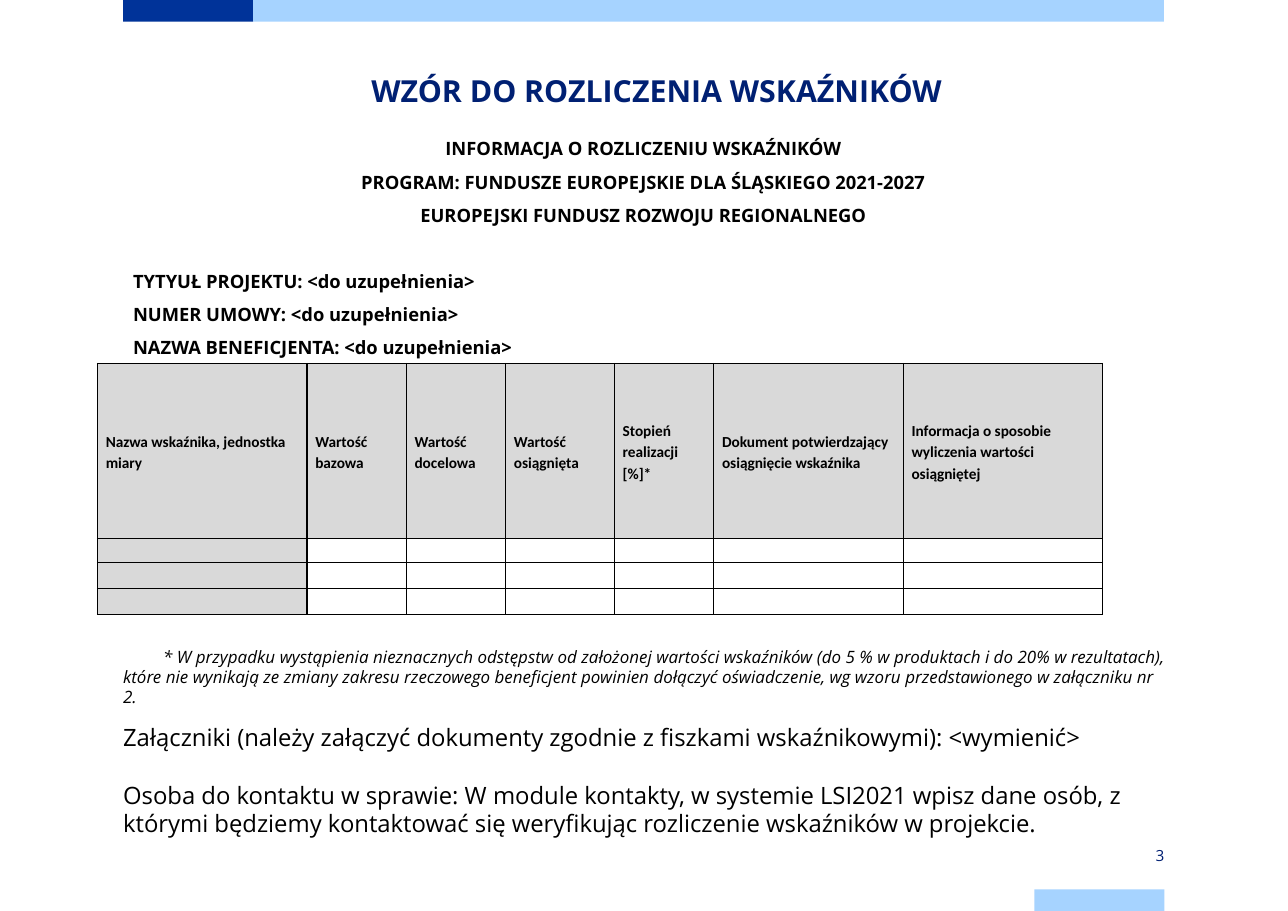
from lxml import etree
from pptx import Presentation
from pptx.dml.color import RGBColor
from pptx.enum import shapes, text
from pptx.oxml import ns
from pptx.util import Cm, Pt

# Content
NAVY, BLUE, SKY, GREY, BLACK = "002073", "003399", "A6D3FF", "D9D9D9", "000000"
LEFT, WIDTH = 2.84, 24.0
CENTER, RIGHT = text.PP_ALIGN.CENTER, text.PP_ALIGN.RIGHT

BARS = [  # left, top, width, colour
    (2.84, 0, 3.0, BLUE),
    (5.84, 0, 21.0, SKY),
    (23.85, 20.5, 3.0, SKY),
]
BAR_HEIGHT = 0.5

TEXTS = [  # box (left, top, width, height), font, paragraph format, paragraphs
    ((LEFT, 1.67, 24.6, 1.0), dict(size=Pt(19.8), bold=True), NAVY,
     dict(alignment=CENTER),
     ["WZÓR DO ROZLICZENIA WSKAŹNIKÓW"]),
    ((LEFT, 2.92, WIDTH, 2.3), dict(size=Pt(12), bold=True), BLACK,
     dict(alignment=CENTER, line_spacing=Pt(21.6)),
     ["INFORMACJA O ROZLICZENIU WSKAŹNIKÓW",
      "PROGRAM: FUNDUSZE EUROPEJSKIE DLA ŚLĄSKIEGO 2021-2027",
      "EUROPEJSKI FUNDUSZ ROZWOJU REGIONALNEGO"]),
    ((3.07, 5.97, 20, 2.3), dict(size=Pt(12), bold=True), BLACK,
     dict(line_spacing=Pt(21.6)),
     ["TYTYUŁ PROJEKTU: <do uzupełnienia>",
      "NUMER UMOWY: <do uzupełnienia>",
      "NAZWA BENEFICJENTA: <do uzupełnienia>"]),
    ((LEFT, 14.91, 24.1, 1.0), dict(size=Pt(11.1), italic=True), BLACK,
     dict(line_spacing=Pt(13.1), indent=Cm(0.92)),
     ["* W przypadku wystąpienia nieznacznych odstępstw od założonej wartości "
      "wskaźników (do 5 % w produktach i do 20% w rezultatach), które nie wynikają "
      "ze zmiany zakresu rzeczowego beneficjent powinien dołączyć oświadczenie, "
      "wg wzoru przedstawionego w załączniku nr 2."]),
    ((LEFT, 16.68, WIDTH, 2.7), dict(size=Pt(15.6)), BLACK,
     dict(line_spacing=Pt(18.4), gap=Pt(19)),
     ["Załączniki (należy załączyć dokumenty zgodnie z fiszkami wskaźnikowymi): <wymienić>",
      "Osoba do kontaktu w sprawie: W module kontakty, w systemie LSI2021 wpisz dane osób, "
      "z którymi będziemy kontaktować się weryfikując rozliczenie wskaźników w projekcie."]),
    ((23.85, 19.51, 3.0, 0.5), dict(size=Pt(10)), NAVY,
     dict(alignment=RIGHT),
     ["3"]),
]

COLUMNS = [  # header, width
    ("Nazwa wskaźnika, jednostka miary", 4.83),
    ("Wartość bazowa", 2.29),
    ("Wartość docelowa", 2.29),
    ("Wartość osiągnięta", 2.51),
    ("Stopień realizacji [%]*", 2.29),
    ("Dokument potwierdzający osiągnięcie wskaźnika", 4.37),
    ("Informacja o sposobie wyliczenia wartości osiągniętej", 4.6),
]
ROW_HEIGHTS = [4.04, 0.55, 0.6, 0.6]
TABLE_LEFT, TABLE_TOP = 2.25, 8.38


def rgb(value):
    return RGBColor.from_string(value)


def apply(target, values):
    for name, value in values.items():
        setattr(target, name, value)


def add_run(p, words, font, colour):
    r = p.add_run()
    r.text = words
    apply(r.font, font)
    r.font.color.rgb = rgb(colour)


def add_text(s, box, font, colour, layout, paragraphs):
    tf = s.shapes.add_textbox(*map(Cm, box)).text_frame
    apply(tf, dict(word_wrap=True, margin_left=0, margin_right=0,
                   margin_top=0, margin_bottom=0))
    layout = dict(layout)
    indent, gap = layout.pop("indent", None), layout.pop("gap", None)
    for i, words in enumerate(paragraphs):
        p = tf.add_paragraph() if i else tf.paragraphs[0]
        apply(p, layout)
        if indent:
            p._p.get_or_add_pPr().set("indent", str(indent))
        if gap and i:
            p.space_before = gap
        add_run(p, words, dict(font, name="Open Sans"), colour)


def add_borders(cell):
    tcPr = cell._tc.get_or_add_tcPr()
    for i, side in enumerate(("lnL", "lnR", "lnT", "lnB")):
        line = etree.Element(ns.qn("a:" + side), w=str(Pt(1)))
        fill = etree.SubElement(line, ns.qn("a:solidFill"))
        etree.SubElement(fill, ns.qn("a:srgbClr"), val=BLACK)
        tcPr.insert(i, line)


def add_indicator_table(s):
    widths = [width for _, width in COLUMNS]
    table = s.shapes.add_table(
        len(ROW_HEIGHTS), len(COLUMNS), Cm(TABLE_LEFT), Cm(TABLE_TOP),
        Cm(sum(widths)), Cm(sum(ROW_HEIGHTS))).table
    apply(table, dict(first_row=False, horz_banding=False))
    for column, width in zip(table.columns, widths):
        column.width = Cm(width)
    for row, height in zip(table.rows, ROW_HEIGHTS):
        row.height = Cm(height)
    for y, row in enumerate(table.rows):
        for x, cell in enumerate(row.cells):
            apply(cell, dict(margin_left=Cm(0.19), margin_right=Cm(0.19),
                             margin_top=0, margin_bottom=0,
                             vertical_anchor=text.MSO_ANCHOR.MIDDLE))
            cell.fill.solid()
            cell.fill.fore_color.rgb = rgb(GREY if x == 0 or y == 0 else "FFFFFF")
            add_borders(cell)
            p = cell.text_frame.paragraphs[0]
            if y == 0:
                p.line_spacing = 1.15
                add_run(p, COLUMNS[x][0],
                        dict(size=Pt(10), bold=True, name="Calibri"), BLACK)
            else:  # small type keeps the empty rows low
                etree.SubElement(p._p, ns.qn("a:endParaRPr"), sz="800")


def main():
    prs = Presentation()
    prs.slide_width, prs.slide_height = Cm(29.7), Cm(21)
    s = prs.slides.add_slide(prs.slide_layouts[6])

    # Bars at the page edges
    for left, top, width, colour in BARS:
        sp = s.shapes.add_shape(shapes.MSO_SHAPE.RECTANGLE, Cm(left), Cm(top),
                                Cm(width), Cm(BAR_HEIGHT))
        sp.shadow.inherit = False
        sp.fill.solid()
        sp.fill.fore_color.rgb = rgb(colour)
        sp.line.fill.background()

    # Text blocks and table
    for block in TEXTS:
        add_text(s, *block)
    add_indicator_table(s)

    prs.save("out.pptx")


if __name__ == "__main__":
    main()
